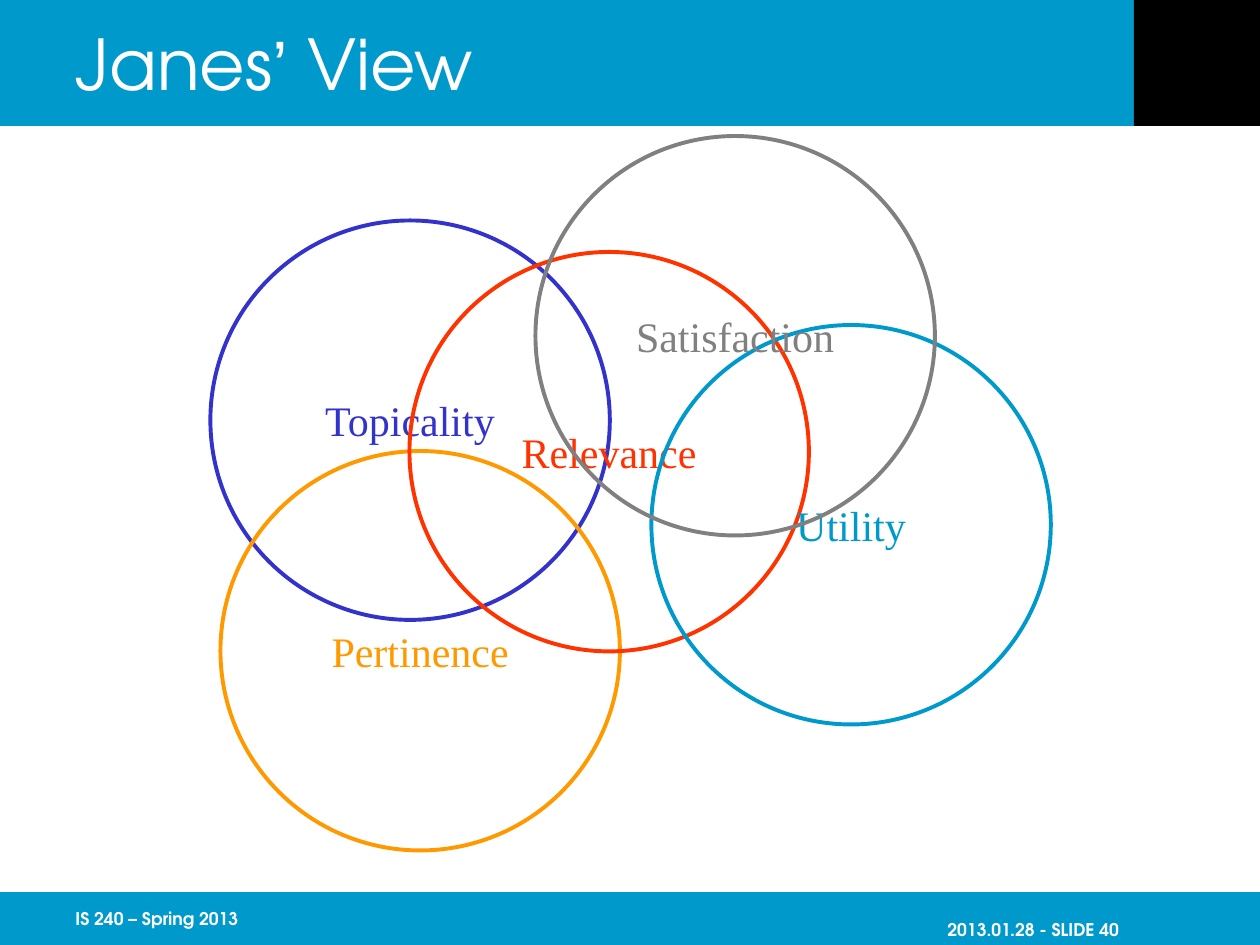
from pptx import Presentation
from pptx.dml.color import RGBColor
from pptx.enum.shapes import MSO_SHAPE
from pptx.enum.text import MSO_ANCHOR, PP_ALIGN
from pptx.util import Inches, Pt

RECTANGLE, OVAL = MSO_SHAPE.RECTANGLE, MSO_SHAPE.OVAL
MIDDLE = MSO_ANCHOR.MIDDLE
LEFT, CENTER, RIGHT = PP_ALIGN.LEFT, PP_ALIGN.CENTER, PP_ALIGN.RIGHT

SANS, SERIF = "TeX Gyre Adventor", "Times New Roman"
BLUE, WHITE, BLACK = "0099CC", "FFFFFF", "000000"
DIAMETER = 3.17
# label, colour, left, top
CIRCLES = [
    ("Topicality", "3333CC", 1.67, 1.75),
    ("Pertinence", "FF9900", 1.75, 3.58),
    ("Relevance", "FF3300", 3.25, 2),
    ("Utility", BLUE, 5.17, 2.58),
    ("Satisfaction", "808080", 4.25, 1.08),
]


def color(hex_string):
    return RGBColor.from_string(hex_string)


def to_inches(box):
    return [Inches(value) for value in box]


def format_run(run, font_name, size, hex_string, bold=False):
    run.font.name = font_name
    run.font.size = Pt(size)
    run.font.bold = bold
    run.font.color.rgb = color(hex_string)


def add_band(slide, box, hex_string):
    band = slide.shapes.add_shape(RECTANGLE, *to_inches(box))
    band.shadow.inherit = False
    band.fill.solid()
    band.fill.fore_color.rgb = color(hex_string)
    band.line.fill.background()


def add_header(slide, box):
    left, top, width, height = box
    add_band(slide, box, BLUE)
    add_band(slide, (left + width - height, top, height, height), BLACK)

    # Title, raised above the bands
    title = slide.shapes.title
    title.left, title.top, title.width, title.height = to_inches(
        (left + 0.5, top, width - 1.5, height))
    slide.shapes._spTree.append(title._element)
    title.text_frame.vertical_anchor = MIDDLE
    paragraph = title.text_frame.paragraphs[0]
    paragraph.alignment = LEFT
    for text, font_name in (("Janes", SANS), ("’", "Arial"), (" View", SANS)):
        run = paragraph.add_run()
        run.text = text
        format_run(run, font_name, 40, WHITE)


def add_footer_text(slide, box, text, alignment, insets):
    text_box = slide.shapes.add_textbox(*to_inches(box))
    frame = text_box.text_frame
    frame.word_wrap = True
    frame.vertical_anchor = MIDDLE
    frame.margin_left, frame.margin_top, frame.margin_right = to_inches(insets)
    frame.text = text
    paragraph = frame.paragraphs[0]
    paragraph.alignment = alignment
    format_run(paragraph.runs[0], SANS, 10, WHITE, bold=True)


def add_footer(slide, box):
    left, top, width, height = box
    text_width = 2.08
    add_band(slide, box, BLUE)
    # Insets are left, top, right; the slide number sits low in the band
    add_footer_text(slide, (left + width - 0.5 - text_width, top, text_width, height),
                    "2013.01.28 - SLIDE 40", RIGHT, (0, 0.22, 0.62))
    add_footer_text(slide, (left + 0.5, top, text_width, height),
                    "IS 240 – Spring 2013", LEFT, (0.1, 0.05, 0))


def add_circle(group, box, label, hex_string):
    circle = group.shapes.add_shape(OVAL, *to_inches(box))
    circle.shadow.inherit = False
    circle.fill.background()
    circle.line.color.rgb = color(hex_string)
    circle.line.width = Pt(2.25)
    frame = circle.text_frame
    frame.word_wrap = False
    frame.vertical_anchor = MIDDLE
    frame.text = label
    paragraph = frame.paragraphs[0]
    paragraph.alignment = CENTER
    format_run(paragraph.runs[0], SERIF, 24, hex_string)


def add_diagram(slide):
    group = slide.shapes.add_group_shape()
    for label, hex_string, left, top in CIRCLES:
        add_circle(group, (left, top, DIAMETER, DIAMETER), label, hex_string)


def main():
    presentation = Presentation()
    presentation.slide_width, presentation.slide_height = Inches(10), Inches(7.5)
    slide = presentation.slides.add_slide(presentation.slide_layouts[5])
    add_header(slide, (0, 0, 10, 1))
    add_footer(slide, (0, 7.08, 10, 0.42))
    add_diagram(slide)
    presentation.save("out.pptx")


if __name__ == "__main__":
    main()
